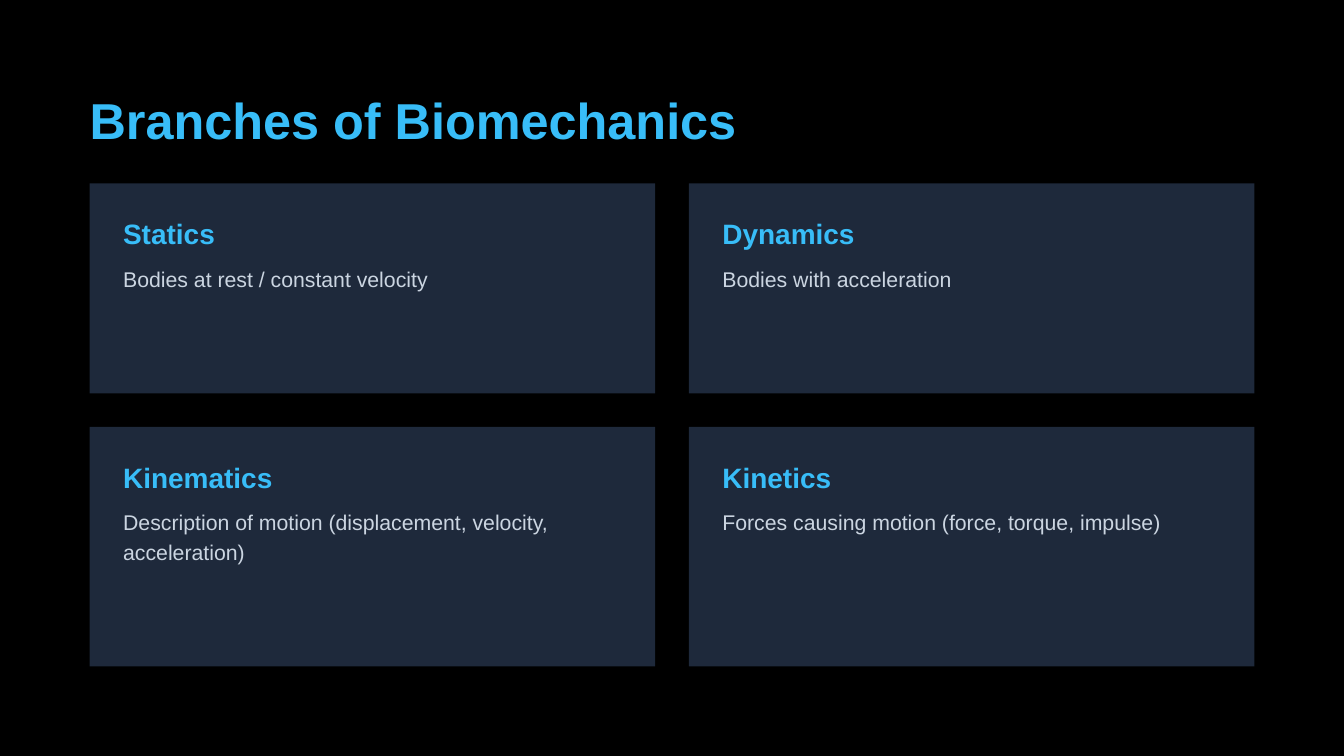
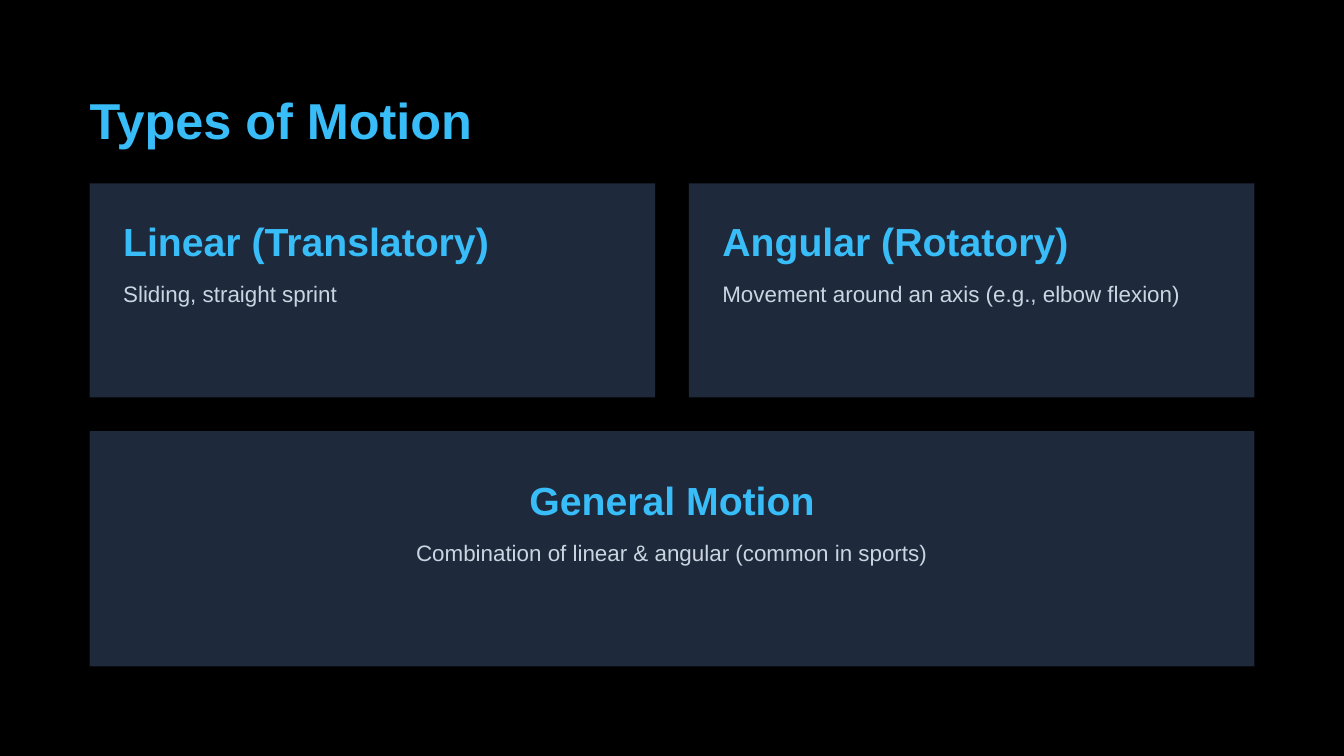
from dataclasses import dataclass

from pptx import Presentation
from pptx.dml.color import RGBColor
from pptx.enum.shapes import MSO_SHAPE
from pptx.enum.text import MSO_ANCHOR, MSO_AUTO_SIZE, PP_ALIGN
from pptx.presentation import Presentation as Deck
from pptx.shapes.base import BaseShape
from pptx.slide import Slide
from pptx.util import Emu, Pt

RECTANGLE = MSO_SHAPE.RECTANGLE
TOP = MSO_ANCHOR.TOP
NO_AUTOFIT = MSO_AUTO_SIZE.NONE
LEFT = PP_ALIGN.LEFT
CENTER = PP_ALIGN.CENTER

EMU_PER_PX = 9525
PX_PER_PT = 4 / 3
SLIDE_WIDTH, SLIDE_HEIGHT = 960, 540
MARGIN = 64
GAP = 24
PADDING = 24
WIDE_PADDING = 32
HEADING_GAP = 8
CONTENT_WIDTH = SLIDE_WIDTH - 2 * MARGIN
CARD_WIDTH = (CONTENT_WIDTH - GAP) // 2
CARDS_TOP = 131
CARDS_BOTTOM = 476
WIDTH_SLACK = 1.02
TITLE_ONLY = 5


@dataclass(frozen=True)
class TextStyle:
    size: float
    color: RGBColor
    bold: bool
    leading: float

    @property
    def line_points(self) -> float:
        return round(self.size * self.leading, 1)

    @property
    def line_px(self) -> int:
        return round(self.line_points * PX_PER_PT)


@dataclass(frozen=True)
class Theme:
    font: str
    background: RGBColor
    card: RGBColor
    title: TextStyle
    small_heading: TextStyle
    small_detail: TextStyle
    large_heading: TextStyle
    large_detail: TextStyle


SKY = RGBColor.from_string("38BDF8")
MIST = RGBColor.from_string("CBD5E1")
THEME = Theme(
    font="Arial",
    background=RGBColor.from_string("000000"),
    card=RGBColor.from_string("1E293B"),
    title=TextStyle(27, SKY, True, 1.2),
    small_heading=TextStyle(15, SKY, True, 1.2),
    small_detail=TextStyle(11.4, MIST, False, 1.4),
    large_heading=TextStyle(21, SKY, True, 1.2),
    large_detail=TextStyle(12, MIST, False, 1.4),
)


@dataclass(frozen=True)
class Box:
    left: int
    top: int
    width: int
    height: int

    def emu(self) -> tuple[Emu, Emu, Emu, Emu]:
        return px(self.left), px(self.top), px(self.width), px(self.height)


@dataclass(frozen=True)
class Card:
    heading: str
    detail: str
    detail_lines: int = 1


@dataclass(frozen=True)
class Topic:
    title: str
    rows: tuple[tuple[Card, ...], ...]
    first_row_height: int
    heading_style: TextStyle
    detail_style: TextStyle


TOPICS = (
    Topic(
        "Branches of Biomechanics",
        (
            (
                Card("Statics", "Bodies at rest / constant velocity"),
                Card("Dynamics", "Bodies with acceleration"),
            ),
            (
                Card(
                    "Kinematics",
                    "Description of motion (displacement, velocity, acceleration)",
                    detail_lines=2,
                ),
                Card("Kinetics", "Forces causing motion (force, torque, impulse)"),
            ),
        ),
        150,
        THEME.small_heading,
        THEME.small_detail,
    ),
    Topic(
        "Types of Motion",
        (
            (
                Card("Linear (Translatory)", "Sliding, straight sprint"),
                Card("Angular (Rotatory)", "Movement around an axis (e.g., elbow flexion)"),
            ),
            (Card("General Motion", "Combination of linear & angular (common in sports)"),),
        ),
        153,
        THEME.large_heading,
        THEME.large_detail,
    ),
)


def px(length: int) -> Emu:
    return Emu(length * EMU_PER_PX)


def write_text(holder: BaseShape, text: str, style: TextStyle, align: PP_ALIGN = LEFT) -> None:
    frame = holder.text_frame
    frame.margin_left = frame.margin_top = frame.margin_right = frame.margin_bottom = 0
    frame.word_wrap = True
    frame.auto_size = NO_AUTOFIT
    frame.vertical_anchor = TOP
    paragraph = frame.paragraphs[0]
    paragraph.alignment = align
    paragraph.line_spacing = Pt(style.line_points)
    run = paragraph.add_run()
    run.text = text
    run.font.name = THEME.font
    run.font.size = Pt(style.size)
    run.font.bold = style.bold
    run.font.color.rgb = style.color


def add_title(slide: Slide, text: str) -> None:
    title = slide.shapes.title
    box = Box(MARGIN, MARGIN, round(CONTENT_WIDTH * WIDTH_SLACK), THEME.title.line_px)
    title.left, title.top, title.width, title.height = box.emu()
    write_text(title, text, THEME.title)


def add_card(slide: Slide, card: Card, box: Box, topic: Topic) -> None:
    panel = slide.shapes.add_shape(RECTANGLE, *box.emu())
    panel.shadow.inherit = False
    panel.fill.solid()
    panel.fill.fore_color.rgb = THEME.card
    panel.line.fill.background()

    spans_row = box.width == CONTENT_WIDTH
    align = CENTER if spans_row else LEFT
    width = box.width - 2 * PADDING
    if not spans_row:
        width = round(width * WIDTH_SLACK)
    left = box.left + PADDING
    top = box.top + (WIDE_PADDING if spans_row else PADDING)

    heading_height = topic.heading_style.line_px
    heading_box = Box(left, top, width, heading_height)
    heading = slide.shapes.add_textbox(*heading_box.emu())
    write_text(heading, card.heading, topic.heading_style, align)

    detail_height = topic.detail_style.line_px * card.detail_lines
    detail_box = Box(left, top + heading_height + HEADING_GAP, width, detail_height)
    detail = slide.shapes.add_textbox(*detail_box.emu())
    write_text(detail, card.detail, topic.detail_style, align)


def add_topic(deck: Deck, topic: Topic) -> None:
    slide = deck.slides.add_slide(deck.slide_layouts[TITLE_ONLY])
    add_title(slide, topic.title)
    second_top = CARDS_TOP + topic.first_row_height + GAP
    row_spans = (
        (CARDS_TOP, topic.first_row_height),
        (second_top, CARDS_BOTTOM - second_top),
    )
    for cards, (top, height) in zip(topic.rows, row_spans):
        width = CONTENT_WIDTH if len(cards) == 1 else CARD_WIDTH
        for column, card in enumerate(cards):
            left = MARGIN + column * (CARD_WIDTH + GAP)
            add_card(slide, card, Box(left, top, width, height), topic)


def main() -> None:
    deck = Presentation()
    deck.slide_width, deck.slide_height = px(SLIDE_WIDTH), px(SLIDE_HEIGHT)
    backdrop = deck.slide_master.background.fill
    backdrop.solid()
    backdrop.fore_color.rgb = THEME.background
    for topic in TOPICS:
        add_topic(deck, topic)
    deck.save("out.pptx")


if __name__ == "__main__":
    main()
